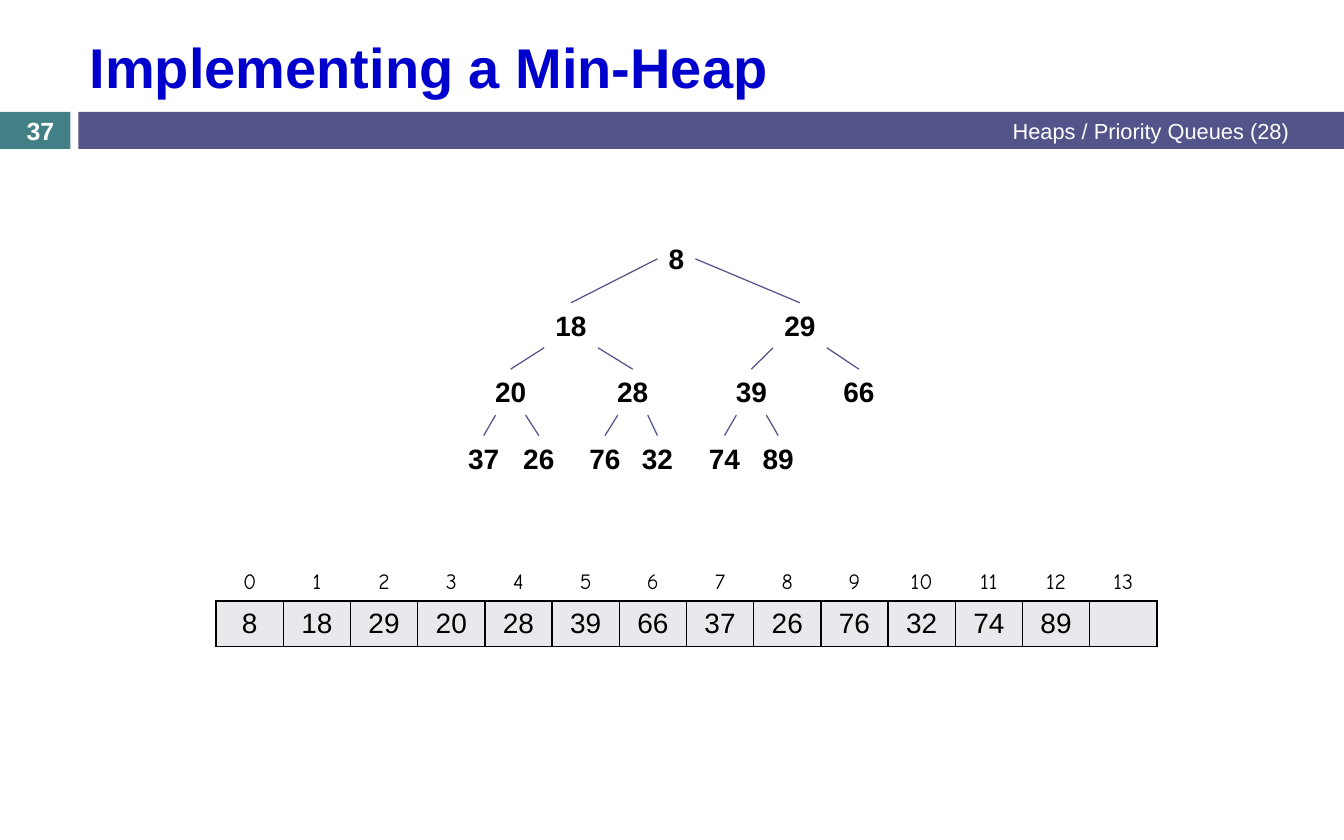
from lxml import etree
from pptx import Presentation
from pptx.dml.color import RGBColor
from pptx.enum import shapes, text
from pptx.oxml import ns
from pptx.util import Cm, Pt

NAVY = RGBColor(0x53, 0x54, 0x8A)
TEAL = RGBColor(0x43, 0x80, 0x86)
BLUE = RGBColor(0x00, 0x00, 0xCC)
GREY = RGBColor(0xE9, 0xE9, 0xED)
BLACK = RGBColor(0, 0, 0)
WHITE = RGBColor(0xFF, 0xFF, 0xFF)

LEFT, CENTER, RIGHT = text.PP_ALIGN.LEFT, text.PP_ALIGN.CENTER, text.PP_ALIGN.RIGHT
TOP, MIDDLE, BOTTOM = (text.MSO_ANCHOR.TOP, text.MSO_ANCHOR.MIDDLE,
                       text.MSO_ANCHOR.BOTTOM)

HEAP = [8, 18, 29, 20, 28, 39, 66, 37, 26, 76, 32, 74, 89]
SLOTS = 14
# Node centres across the tree, in heap order (cm)
NODE_X = [4.98, 2.59, 7.78, 1.22, 3.99, 6.68, 9.12,
          0.61, 1.86, 3.36, 4.55, 6.07, 7.29]
NODE_W, NODE_H = 1.22, 1.02
# Where edges leave a parent, by level: distance from its centre, from its top
EDGE_START = [(0.43, 0.51), (0.61, 1.02), (0.34, 1.04)]


def write(tf, words, align, size, color, name="Arial", bold=False):
    p = tf.paragraphs[0]
    p.alignment = align
    r = p.add_run()
    r.text = str(words)
    font = {"name": name, "size": Pt(size), "bold": bold}
    for key, value in font.items():
        setattr(r.font, key, value)
    r.font.color.rgb = color


def add_text(slide, box, words, align, size, color, bold=False, anchor=MIDDLE):
    tf = slide.shapes.add_textbox(*map(Cm, box)).text_frame
    tf.word_wrap = True
    tf.vertical_anchor = anchor
    write(tf, words, align, size, color, bold=bold)


def add_bar(slide, box, color):
    sp = slide.shapes.add_shape(shapes.MSO_SHAPE.RECTANGLE, *map(Cm, box))
    sp.shadow.inherit = False
    sp.fill.solid()
    sp.fill.fore_color.rgb = color
    sp.line.fill.background()


def add_edge(slide, x1, y1, x2, y2):
    line = slide.shapes.add_connector(shapes.MSO_CONNECTOR.STRAIGHT,
                                      *map(Cm, (x1, y1, x2, y2)))
    line.line.color.rgb = NAVY
    line.line.width = Pt(0.79)
    etree.SubElement(line._element.spPr, ns.qn("a:effectLst"))


def set_borders(cell, sides):
    """Draw 1 pt borders; sides maps L, R, T, B to colours."""
    tcPr = cell._tc.get_or_add_tcPr()
    for i, side in enumerate("LRTB"):
        ln = etree.Element(ns.qn(f"a:ln{side}"), w=str(Pt(1)))
        fill = etree.SubElement(ln, ns.qn("a:solidFill"))
        etree.SubElement(fill, ns.qn("a:srgbClr"), val=str(sides[side]))
        tcPr.insert(i, ln)


def build_title(slide, box):
    title = slide.shapes.title
    for key, value in zip(("left", "top", "width", "height"), box):
        setattr(title, key, Cm(value))
    tf = title.text_frame
    tf.auto_size = text.MSO_AUTO_SIZE.NONE
    tf.vertical_anchor = MIDDLE
    write(tf, "Implementing a Min-Heap", LEFT, 36, BLUE, bold=True)


def build_band(slide, box):
    x, y, w, h = box
    # Slide number block and topic bar
    number_w, bar_x = 1.6, 1.78
    add_bar(slide, (x, y, number_w, h), TEAL)
    add_bar(slide, (x + bar_x, y, w - bar_x, h), NAVY)
    add_text(slide, (x, y, 1.83, h), 37, CENTER, 16, WHITE, bold=True)
    add_text(slide, (x + 11.43, y, 18.06, h), "Heaps / Priority Queues (28)",
             RIGHT, 14, WHITE)


def build_tree(slide, box):
    x, y, _, h = box
    step = (h - NODE_H) / 3
    for i, value in enumerate(HEAP):
        level = (i + 1).bit_length() - 1
        cx, top = x + NODE_X[i], y + level * step
        # Edge from the parent, leaving it on this child's side
        if i:
            dx, dy = EDGE_START[level - 1]
            side = -1 if i % 2 else 1
            add_edge(slide, x + NODE_X[(i - 1) // 2] + side * dx,
                     top - step + dy, cx, top)
        add_text(slide, (cx - NODE_W / 2, top, NODE_W, NODE_H), value,
                 CENTER, 18, BLACK, bold=True, anchor=TOP)


def build_array(slide, box):
    frame = slide.shapes.add_table(2, SLOTS, *map(Cm, box))
    table = frame.table
    table.first_row = table.horz_banding = False
    index_sides = {"L": WHITE, "R": WHITE, "T": WHITE, "B": BLACK}
    value_sides = dict.fromkeys("LRTB", BLACK)
    # Index row above, heap values below
    rows = [(range(SLOTS), WHITE, BOTTOM, 14, "Comic Neue", index_sides),
            (HEAP + [""], GREY, MIDDLE, 18, "Arial", value_sides)]
    for row, (values, fill, anchor, size, name, sides) in enumerate(rows):
        for col, value in enumerate(values):
            cell = table.cell(row, col)
            cell.fill.solid()
            cell.fill.fore_color.rgb = fill
            cell.vertical_anchor = anchor
            write(cell.text_frame, value, CENTER, size, BLACK, name)
            set_borders(cell, sides)


def main():
    prs = Presentation()
    prs.slide_width, prs.slide_height = Cm(30.48), Cm(19.05)
    slide = prs.slides.add_slide(prs.slide_layouts[5])
    build_band(slide, (0, 2.54, 30.48, 0.84))
    build_array(slide, (4.9, 12.6, 21.34, 2.06))
    build_tree(slide, (10.36, 5.36, 9.73, 5.54))
    build_title(slide, (1.78, 0.48, 27.71, 2.03))
    prs.save("out.pptx")


if __name__ == "__main__":
    main()
